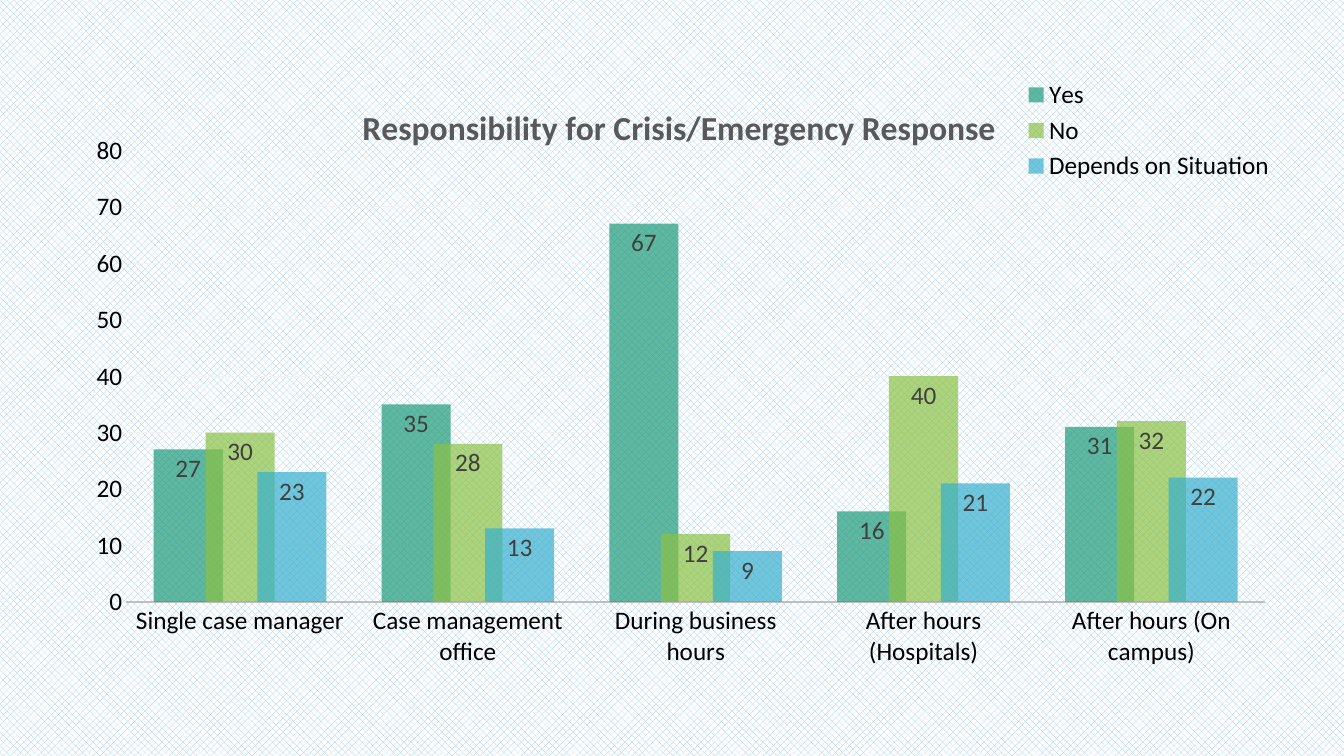
from dataclasses import dataclass

from lxml.etree import SubElement
from pptx import Presentation
from pptx.chart.chart import Chart
from pptx.chart.data import CategoryChartData
from pptx.chart.series import BarSeries
from pptx.dml.color import RGBColor
from pptx.enum.chart import (XL_CHART_TYPE, XL_LABEL_POSITION,
                             XL_LEGEND_POSITION, XL_TICK_MARK)
from pptx.enum.dml import MSO_PATTERN
from pptx.oxml import parse_xml
from pptx.oxml.ns import nsdecls, qn
from pptx.slide import Slide
from pptx.text.text import Font
from pptx.util import Inches, Pt


@dataclass(frozen=True)
class Theme:
    font: str = "Calibri"
    title_size: int = 24
    text_size: int = 18
    title: str = "595959"
    text: str = "000000"
    value_label: str = "404040"
    axis_line: str = "BFBFBF"
    grid: str = "F2F2F2"
    hatch: str = "94C8ED"
    paper: str = "FFFFFF"
    bar_opacity: int = 70


@dataclass(frozen=True)
class Answer:
    name: str
    counts: tuple[int, ...]
    color: str


THEME = Theme()
TITLE = "Responsibility for Crisis/Emergency Response"
SITUATIONS = ("Single case manager", "Case management office",
              "During business hours", "After hours (Hospitals)",
              "After hours (On campus)")
ANSWERS = (
    Answer("Yes", (27, 35, 67, 16, 31), "1D9A78"),
    Answer("No", (30, 28, 12, 40, 32), "8BC145"),
    Answer("Depends on Situation", (23, 13, 9, 21, 22), "36AFCE"),
)


def style_font(font: Font, color: str, size: int = THEME.text_size,
               bold: bool = False) -> None:
    font.name = THEME.font
    font.size = Pt(size)
    font.bold = bold
    font.color.rgb = RGBColor.from_string(color)


def manual_layout(inner: bool = False, **fractions: float):
    """Build a chart layout from fractions of the chart's size."""
    target = '<c:layoutTarget val="inner"/>' if inner else ""
    modes = '<c:xMode val="edge"/><c:yMode val="edge"/>'
    sizes = "".join(f'<c:{key} val="{value}"/>' for key, value in fractions.items())
    return parse_xml(f'<c:layout {nsdecls("c")}><c:manualLayout>'
                     f'{target}{modes}{sizes}</c:manualLayout></c:layout>')


def paint_background(slide: Slide) -> None:
    fill = slide.background.fill
    fill.patterned()
    fill.pattern = MSO_PATTERN.PERCENT_50
    fill.fore_color.rgb = RGBColor.from_string(THEME.hatch)
    fill.back_color.rgb = RGBColor.from_string(THEME.paper)


def add_response_chart(slide: Slide) -> Chart:
    responses = CategoryChartData(number_format="General")
    responses.categories = SITUATIONS
    for answer in ANSWERS:
        responses.add_series(answer.name, answer.counts)
    chart = slide.shapes.add_chart(
        XL_CHART_TYPE.COLUMN_CLUSTERED, Inches(0.65), Inches(0.74),
        Inches(12.02), Inches(6.02), responses).chart
    style_font(chart.font, THEME.text)
    return chart


def style_title(chart: Chart) -> None:
    heading = chart.chart_title
    heading.text_frame.text = TITLE
    style_font(heading.text_frame.paragraphs[0].runs[0].font,
               THEME.title, THEME.title_size, bold=True)
    element = heading._element
    for old in element.findall(qn("c:layout")):
        element.remove(old)
    element.find(qn("c:tx")).addnext(manual_layout(x=0.24, y=0.04))


def style_axes(chart: Chart) -> None:
    for axis in (chart.category_axis, chart.value_axis):
        axis.major_tick_mark = XL_TICK_MARK.NONE
        axis.minor_tick_mark = XL_TICK_MARK.NONE
        style_font(axis.tick_labels.font, THEME.text)
    baseline = chart.category_axis.format.line
    baseline.width = Pt(1.25)
    baseline.color.rgb = RGBColor.from_string(THEME.axis_line)

    counts = chart.value_axis
    counts.minimum_scale, counts.maximum_scale, counts.major_unit = 0, 80, 10
    counts.format.line.fill.background()
    counts.has_major_gridlines = True
    grid = counts.major_gridlines.format.line
    grid.width = Pt(0.75)
    grid.color.rgb = RGBColor.from_string(THEME.grid)


def style_legend(chart: Chart) -> None:
    chart.has_legend = True
    chart.legend.position = XL_LEGEND_POSITION.CORNER
    chart.legend.include_in_layout = True
    style_font(chart.legend.font, THEME.text)


def style_bars(bars: BarSeries, answer: Answer) -> None:
    bars.invert_if_negative = False
    bars.format.fill.solid()
    bars.format.fill.fore_color.rgb = RGBColor.from_string(answer.color)
    tint = next(bars._element.iter(qn("a:srgbClr")))
    SubElement(tint, qn("a:alpha"), val=str(THEME.bar_opacity * 1000))

    labels = bars.data_labels
    labels.show_value = True
    labels.position = XL_LABEL_POSITION.INSIDE_END
    style_font(labels.font, THEME.value_label)


def style_plot(chart: Chart) -> None:
    plot = chart.plots[0]
    plot.vary_by_categories = False
    plot.gap_width = 80
    plot.overlap = 25
    for bars, answer in zip(plot.series, ANSWERS):
        style_bars(bars, answer)
    area = plot._element.getparent()
    for old in area.findall(qn("c:layout")):
        area.remove(old)
    area.insert(0, manual_layout(inner=True, x=0.05, y=0.125, w=0.94, h=0.744))


def main() -> None:
    deck = Presentation()
    deck.slide_width, deck.slide_height = Inches(13.33), Inches(7.5)
    slide = deck.slides.add_slide(deck.slide_layouts[6])
    paint_background(slide)

    # Clustered columns: one group per situation, one column per answer
    chart = add_response_chart(slide)
    style_title(chart)
    style_axes(chart)
    style_legend(chart)
    style_plot(chart)
    deck.save("out.pptx")


if __name__ == "__main__":
    main()
